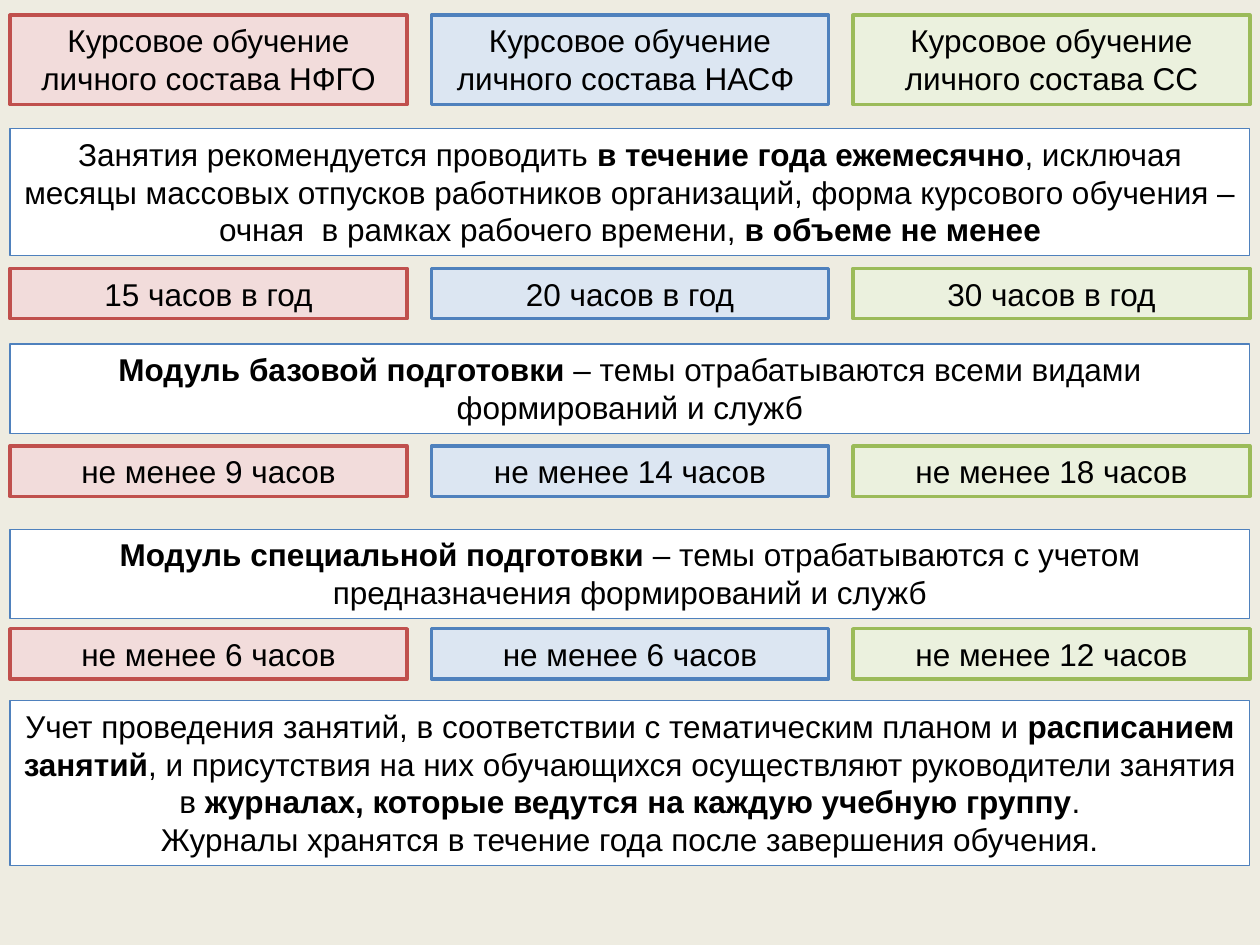
from dataclasses import dataclass

from pptx import Presentation
from pptx.dml.color import RGBColor
from pptx.enum.shapes import MSO_SHAPE
from pptx.enum.text import MSO_ANCHOR, MSO_AUTO_SIZE, PP_ALIGN
from pptx.util import Inches, Pt


@dataclass(frozen=True)
class Theme:
    background: str = "EEECE1"
    text: str = "000000"
    font: str = "Arial"
    size: float = 18
    statement: tuple = ("FFFFFF", "4F81BD", 0.75)
    groups: tuple = (
        ("F2DCDB", "C0504D", 2),
        ("DCE6F2", "4F81BD", 2),
        ("EBF1DE", "9BBB59", 2),
    )


theme = Theme()


def add_box(slide, left, top, width, height, colours, paragraphs):
    fill, outline, weight = colours
    box = slide.shapes.add_shape(
        MSO_SHAPE.RECTANGLE, Inches(left), Inches(top), Inches(width), Inches(height)
    )
    box.shadow.inherit = False
    box.fill.solid()
    box.fill.fore_color.rgb = RGBColor.from_string(fill)
    box.line.color.rgb = RGBColor.from_string(outline)
    box.line.width = Pt(weight)
    frame = box.text_frame
    frame.word_wrap = True
    frame.auto_size = MSO_AUTO_SIZE.SHAPE_TO_FIT_TEXT
    frame.vertical_anchor = MSO_ANCHOR.TOP
    for index, text in enumerate(paragraphs):
        paragraph = frame.add_paragraph() if index else frame.paragraphs[0]
        paragraph.alignment = PP_ALIGN.CENTER
        paragraph.font.name = theme.font
        paragraph.font.size = Pt(theme.size)
        paragraph.font.color.rgb = RGBColor.from_string(theme.text)
        for position, part in enumerate(text.split("**")):
            if part:
                run = paragraph.add_run()
                run.text = part
                if position % 2:
                    run.font.bold = True


margin = 0.08
full_width = 9.84
group_width = 3.15
group_step = (full_width - group_width) / (len(theme.groups) - 1)

group_rows = [
    (0.12, 0.71, [
        "Курсовое обучение личного состава НФГО",
        "Курсовое обучение личного состава НАСФ ",
        "Курсовое обучение личного состава СС",
    ]),
    (2.13, 0.4, [f"{hours} часов в год" for hours in (15, 20, 30)]),
    (3.54, 0.4, [f"не менее {hours} часов" for hours in (9, 14, 18)]),
    (4.99, 0.4, [f"не менее {hours} часов" for hours in (6, 6, 12)]),
]

statements = [
    (1.02, 1.01, [
        "Занятия рекомендуется проводить **в течение года ежемесячно**, исключая "
        "месяцы массовых отпусков работников организаций, форма курсового обучения – "
        "очная  в рамках рабочего времени, **в объеме не менее**",
    ]),
    (2.73, 0.71, [
        "**Модуль базовой подготовки **– темы отрабатываются всеми видами "
        "формирований и служб",
    ]),
    (4.2, 0.71, [
        "**Модуль специальной подготовки **– темы отрабатываются с учетом "
        "предназначения формирований и служб",
    ]),
    (5.56, 1.31, [
        "Учет проведения занятий, в соответствии с тематическим планом и "
        "**расписанием занятий**, и присутствия на них обучающихся осуществляют "
        "руководители занятия в **журналах, которые ведутся на каждую учебную группу**.",
        "Журналы хранятся в течение года после завершения обучения.",
    ]),
]

presentation = Presentation()
presentation.slide_width = Inches(10)
presentation.slide_height = Inches(7.5)
slide = presentation.slides.add_slide(presentation.slide_layouts[6])
slide.background.fill.solid()
slide.background.fill.fore_color.rgb = RGBColor.from_string(theme.background)

for top, height, labels in group_rows:
    for column, (colours, label) in enumerate(zip(theme.groups, labels)):
        left = margin + column * group_step
        add_box(slide, left, top, group_width, height, colours, [label])

for top, height, paragraphs in statements:
    add_box(slide, margin, top, full_width, height, theme.statement, paragraphs)

presentation.save("out.pptx")
